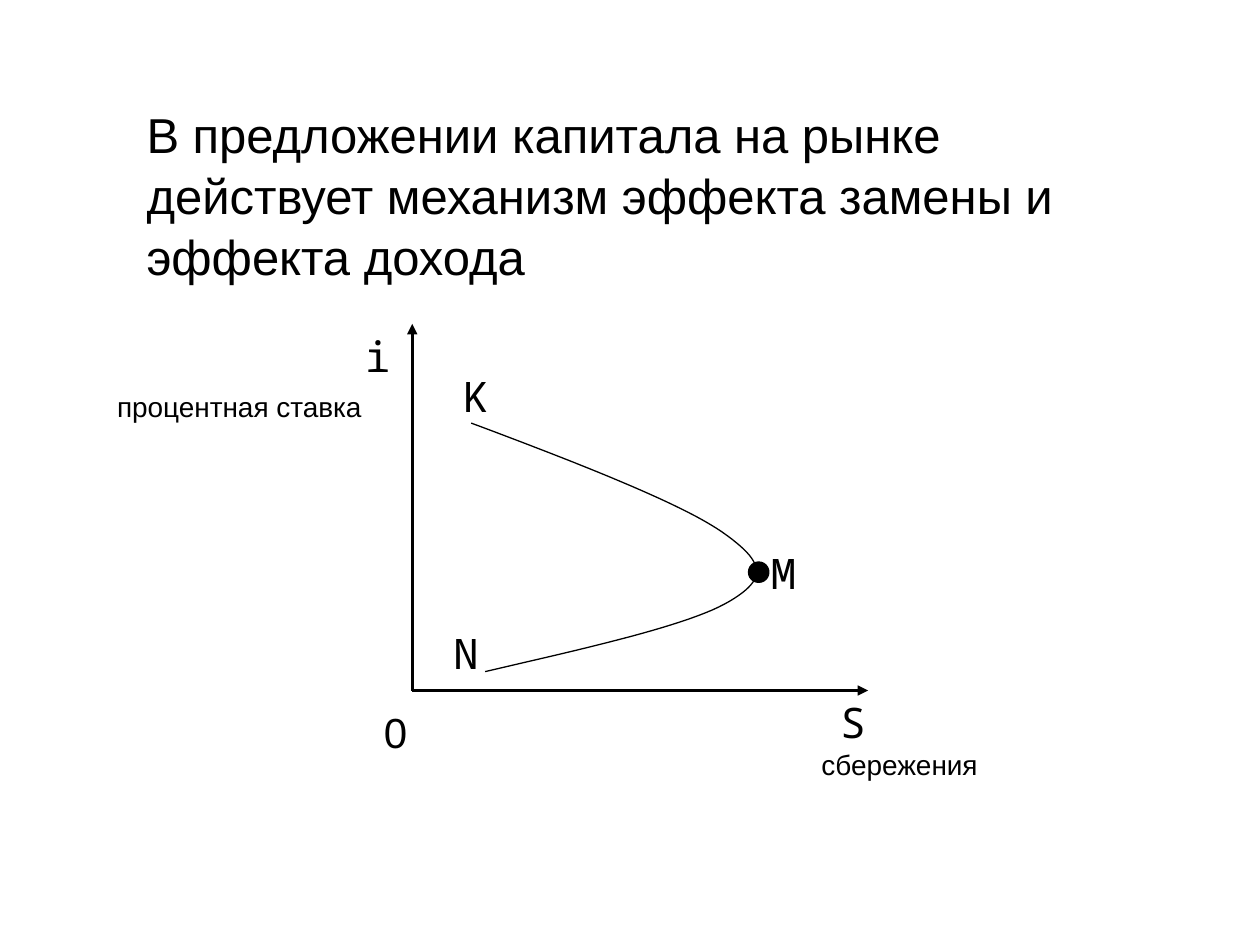
from lxml import etree
from pptx import Presentation
from pptx.dml.color import RGBColor
from pptx.enum.shapes import MSO_CONNECTOR, MSO_SHAPE
from pptx.enum.text import MSO_ANCHOR, MSO_AUTO_SIZE, PP_ALIGN
from pptx.oxml.ns import qn
from pptx.util import Cm, Pt

LINE = MSO_CONNECTOR.STRAIGHT
OVAL = MSO_SHAPE.OVAL
TOP = MSO_ANCHOR.TOP
FIXED, GROW = MSO_AUTO_SIZE.NONE, MSO_AUTO_SIZE.SHAPE_TO_FIT_TEXT
LEFT = PP_ALIGN.LEFT
BLACK = "000000"
SANS, MONO = "Arial", "Noto Sans Mono"
STEPS = 24

CURVE = [
    [(1.19, 2), (3.3, 2.79), (5.38, 3.6), (6.24, 4.19)],
    [(6.24, 4.19), (7.11, 4.8), (7.18, 5.13), (6.4, 5.59)],
    [(6.4, 5.59), (5.61, 6.07), (3.53, 6.53), (1.47, 7.01)],
]
MARKS = [
    ("i", -1.2, 0, 2, MONO),
    ("S", 8.38, 7.39, 2, MONO),
    ("K", 0.78, 0.81, 2, MONO),
    ("N", 0.58, 5.99, 2, MONO),
    ("0", -0.82, 7.59, 1.4, SANS),
    ("M", 6.98, 4.39, 2, MONO),
]
NAMES = [
    ("процентная ставка", -6.2, 1.19, 5.59),
    ("сбережения", 8, 8.41, 4.19),
]


def paint(fmt, color):
    """Set a solid colour on a fill."""
    fmt.solid()
    fmt.fore_color.rgb = RGBColor.from_string(color)


def write(frame, text, size, font):
    """Write one left-aligned run into a text frame."""
    frame.word_wrap = True
    frame.vertical_anchor = TOP
    para = frame.paragraphs[0]
    para.alignment = LEFT
    run = para.add_run()
    run.text = text
    run.font.size = Pt(size)
    run.font.name = font
    paint(run.font.fill, BLACK)
    return para


def head(slide, x, y, w, h):
    """Place the title in its box."""
    title = slide.shapes.title
    title.left, title.top, title.width, title.height = Cm(x), Cm(y), Cm(w), Cm(h)
    text = "В предложении капитала на рынке действует механизм эффекта замены и эффекта дохода"
    para = write(title.text_frame, text, 28, SANS)
    para.line_spacing = 1.04
    title.text_frame.auto_size = FIXED


def label(slide, text, x, y, w, h, size, font):
    """Add a label that grows with its text."""
    frame = slide.shapes.add_textbox(Cm(x), Cm(y), Cm(w), Cm(h)).text_frame
    write(frame, text, size, font)
    frame.auto_size = GROW


def axis(slide, x, y, end, stop):
    """Draw an axis with an arrowhead at its far end."""
    line = slide.shapes.add_connector(LINE, Cm(x), Cm(y), Cm(end), Cm(stop))
    paint(line.line.fill, BLACK)
    line.line.width = Pt(1.5)
    etree.SubElement(line.line.fill._xPr, qn("a:tailEnd"), type="triangle")
    etree.SubElement(line._element.spPr, qn("a:effectLst"))


def bend(a, b, c, d, t):
    """Give the point at t on a cubic curve."""
    u = 1 - t
    return [
        u**3 * p + 3 * u * u * t * q + 3 * u * t * t * r + t**3 * s
        for p, q, r, s in zip(a, b, c, d)
    ]


def curve(slide, x, y):
    """Draw the bent supply curve."""
    dots = [bend(*part, n / STEPS) for part in CURVE for n in range(STEPS)]
    dots.append(CURVE[-1][-1])
    first, *rest = [(Cm(x + a), Cm(y + b)) for a, b in dots]
    build = slide.shapes.build_freeform(*first)
    build.add_line_segments(rest, close=False)
    shape = build.convert_to_shape()
    shape.shadow.inherit = False
    shape.fill.background()
    paint(shape.line.fill, BLACK)
    shape.line.width = Pt(0.75)


def graph(slide, x, y, w, h):
    """Draw axes, curve, turning point and labels around the box."""
    axis(slide, x, y + h, x, y)
    axis(slide, x, y + h, x + w, y + h)
    curve(slide, x, y)
    dot = slide.shapes.add_shape(OVAL, Cm(x + 6.78), Cm(y + 4.8), Cm(0.41), Cm(0.41))
    dot.shadow.inherit = False
    paint(dot.fill, BLACK)
    paint(dot.line.fill, BLACK)
    dot.line.width = Pt(0.75)
    for text, left, top, wide, font in MARKS:
        label(slide, text, x + left, y + top, wide, 1.27, 24, font)
    for text, left, top, wide in NAMES:
        label(slide, text, x + left, y + top, wide, 0.94, 16, SANS)


def main():
    """Build the slide and save it."""
    deck = Presentation()
    deck.slide_width, deck.slide_height = Cm(25.4), Cm(19.05)
    slide = deck.slides.add_slide(deck.slide_layouts[5])
    head(slide, 2.7, 1.93, 21.2, 3.81)
    graph(slide, 8.31, 6.53, 9.19, 7.39)
    deck.save("out.pptx")


if __name__ == "__main__":
    main()
